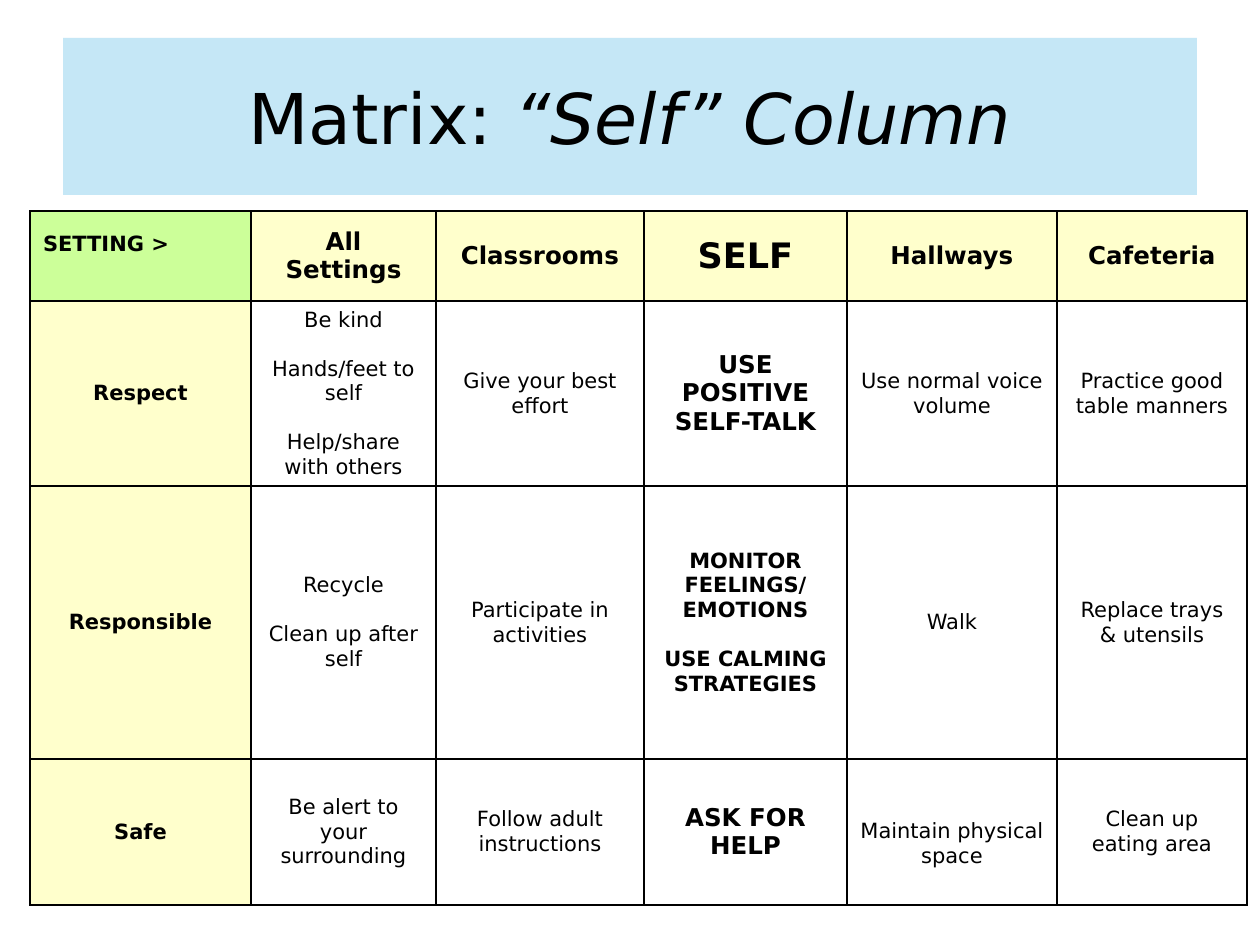
from lxml.etree import SubElement
from pptx import Presentation
from pptx.dml.color import RGBColor
from pptx.enum.text import MSO_ANCHOR, MSO_AUTO_SIZE, PP_ALIGN
from pptx.oxml import parse_xml
from pptx.oxml.ns import nsdecls, qn
from pptx.util import Pt

SCALE = 914400 / 126
FONT = "DejaVu Sans"
BLACK = RGBColor(0x00, 0x00, 0x00)
WHITE = RGBColor(0xFF, 0xFF, 0xFF)
BLUE = RGBColor(0xA9, 0xDC, 0xF2)
GREEN = RGBColor(0xCC, 0xFF, 0x99)
CREAM = RGBColor(0xFF, 0xFF, 0xCC)

COLUMN_WIDTHS = [221, 185, 208, 203, 210, 190]
ROW_HEIGHTS = [90, 185, 273, 146]
SELF_COLUMN = 3
LINE = 24
MATRIX = [
    ["SETTING >", "All Settings", "Classrooms", "SELF", "Hallways", "Cafeteria"],
    ["Respect", "Be kind\nHands/feet to self\nHelp/share with others",
     "Give your best effort", "USE POSITIVE SELF-TALK",
     "Use normal voice volume", "Practice good table manners"],
    ["Responsible", "Recycle\nClean up after self", "Participate in activities",
     "MONITOR FEELINGS/ EMOTIONS\nUSE CALMING STRATEGIES",
     "Walk", "Replace trays & utensils"],
    ["Safe", "Be alert to your surrounding", "Follow adult instructions",
     "ASK FOR HELP", "Maintain physical space", "Clean up eating area"],
]
SPECIAL_SIZES = {(0, 0): 12, (0, SELF_COLUMN): 20,
                 (1, SELF_COLUMN): 14, (3, SELF_COLUMN): 14}


def px(length):
    return round(length * SCALE)


def add_span(para, text, size, bold=False, italic=False):
    span = para.add_run()
    span.text = text
    span.font.name = FONT
    span.font.size = Pt(size)
    span.font.bold = bold
    span.font.italic = italic
    span.font.color.rgb = BLACK


def add_title(page):
    title = page.shapes.title
    title.left, title.top, title.width, title.height = map(px, (63, 38, 1134, 157))
    title.fill.solid()
    title.fill.fore_color.rgb = BLUE
    color = title.fill._xPr.find(qn("a:solidFill"))[0]
    SubElement(color, qn("a:alpha"), val="67000")
    frame = title.text_frame
    frame.auto_size = MSO_AUTO_SIZE.NONE
    frame.word_wrap = True
    frame.vertical_anchor = MSO_ANCHOR.MIDDLE
    para = frame.paragraphs[0]
    para.alignment = PP_ALIGN.CENTER
    add_span(para, "Matrix: ", 40)
    add_span(para, "“Self” Column", 40, italic=True)


def add_borders(cell):
    properties = cell._tc.get_or_add_tcPr()
    for side in "LRTB":
        properties.append(parse_xml(
            f'<a:ln{side} {nsdecls("a")} w="{Pt(1)}"><a:solidFill>'
            f'<a:srgbClr val="{BLACK}"/></a:solidFill></a:ln{side}>'))


def fill_cell(cell, text, color, size, bold, alignment):
    add_borders(cell)
    cell.fill.solid()
    cell.fill.fore_color.rgb = color
    cell.vertical_anchor = MSO_ANCHOR.MIDDLE
    cell.margin_left = cell.margin_right = px(13)
    cell.margin_top = cell.margin_bottom = px(6)
    frame = cell.text_frame
    for index, line in enumerate(text.split("\n")):
        para = frame.add_paragraph() if index else frame.paragraphs[0]
        para.alignment = alignment
        if index:
            para.space_before = Pt(14)
        add_span(para, line, size, bold)


def add_matrix(page):
    frame = page.shapes.add_table(
        len(ROW_HEIGHTS), len(COLUMN_WIDTHS), px(30), px(211),
        px(sum(COLUMN_WIDTHS)), px(sum(ROW_HEIGHTS)))
    table = frame.table
    table.first_row = table.horz_banding = False
    for column, width in zip(table.columns, COLUMN_WIDTHS):
        column.width = px(width)
    for row, height in zip(table.rows, ROW_HEIGHTS):
        row.height = px(height)
    for r, texts in enumerate(MATRIX):
        for c, text in enumerate(texts):
            corner = r == 0 and c == 0
            heading = r == 0 or c == 0
            color = GREEN if corner else CREAM if heading else WHITE
            size = SPECIAL_SIZES.get((r, c), 14 if r == 0 else 12)
            alignment = PP_ALIGN.LEFT if corner else PP_ALIGN.CENTER
            fill_cell(table.cell(r, c), text, color, size,
                      heading or c == SELF_COLUMN, alignment)
    table.cell(0, 0).margin_bottom = px(6 + LINE)
    table.cell(3, 4).margin_top = px(6 + LINE)


def main():
    deck = Presentation()
    deck.slide_width, deck.slide_height = px(1260), px(945)
    page = deck.slides.add_slide(deck.slide_layouts[5])
    add_title(page)
    add_matrix(page)
    deck.save("out.pptx")


if __name__ == "__main__":
    main()
